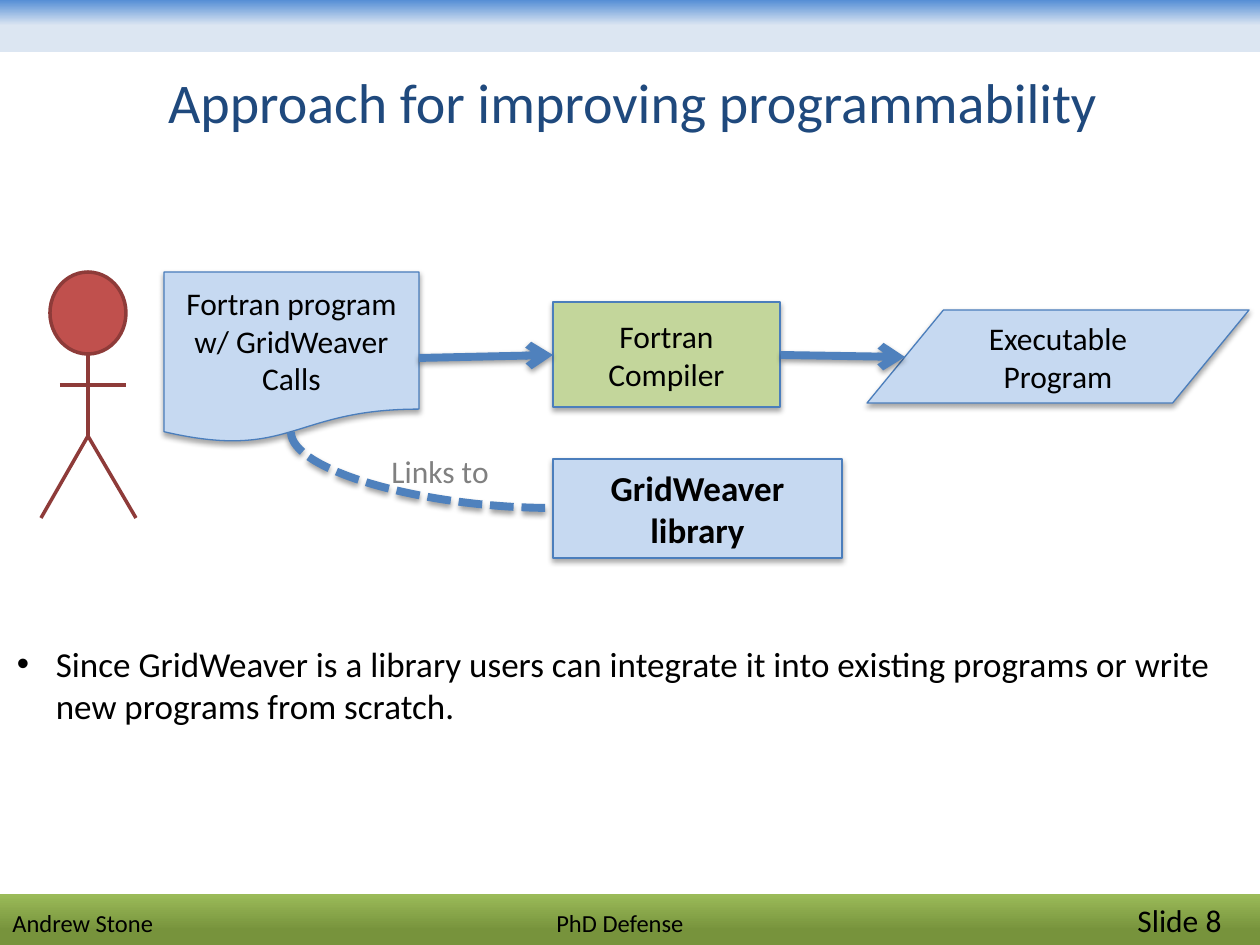
from lxml import etree
from pptx import Presentation
from pptx import util as u
from pptx.dml.color import RGBColor
from pptx.enum import dml, shapes, text
from pptx.oxml import ns

SHAPE, LINK = shapes.MSO_SHAPE, shapes.MSO_CONNECTOR
ALIGN, ANCHOR, FIT = text.PP_ALIGN, text.MSO_ANCHOR, text.MSO_AUTO_SIZE
DPI = 126

THEME = {
    "font": "Calibri", "ink": "000000", "title": "1F497D", "muted": "808080",
    "box": "C6D9F1", "tool": "C3D69B", "edge": "4B7EBC", "arrow": "4F81BD",
    "user": "C0504D", "limb": "8E3B39",
    "foot": [(0, "9BBB59"), (0.7, "77933C")],
    "head": [(0, "558ED5"), (0.49, "DCE6F2")],
    "big": 32, "mid": 20, "body": 18, "small": 14,
}

TITLE = "Approach for improving programmability"
POINT = ("Since GridWeaver is a library users can integrate it into existing "
         "programs or write new programs from scratch.")
FOOT = [("Andrew Stone\tPhD Defense\t", "small"), ("Slide 8", "body")]
TABS = [544, 1125]
BARS = [("foot", (0, 894, 1260, 52)), ("head", (0, 0, 1260, 52))]
BOXES = [
    (SHAPE.FLOWCHART_DOCUMENT, (164, 272, 255, 171), "box", "body", False,
     ["Fortran program w/ GridWeaver Calls"]),
    (SHAPE.FLOWCHART_DATA, (867, 310, 382, 93), "box", "body", False,
     ["Executable", "Program"]),
    (SHAPE.RECTANGLE, (553, 459, 289, 99), "box", "mid", True,
     ["GridWeaver library"]),
    (SHAPE.RECTANGLE, (553, 302, 227, 105), "tool", "body", False,
     ["Fortran Compiler"]),
]
ARROWS = [(419, 358, 553, 355), (781, 355, 905, 357)]
CURVE = (291, 432, 553, 508)
FACE = (50, 272, 76, 82)
LIMBS = [(88, 354, 88, 436), (88, 436, 136, 518),
         (88, 436, 41, 518), (60, 385, 126, 385)]


def px(*vals):
    return [u.Emu(round(v * u.Inches(1) / DPI)) for v in vals]


def rgb(key):
    return RGBColor.from_string(THEME.get(key, key))


def put(obj, **vals):
    for name, val in vals.items():
        setattr(obj, name, val)


def sub(node, tag, **vals):
    return etree.SubElement(node, ns.qn(tag), vals)


def place(shape, box):
    put(shape, **dict(zip(("left", "top", "width", "height"), px(*box))))


def write(para, words, size, ink="ink", bold=False):
    run = para.add_run()
    run.text = words
    put(run.font, name=THEME["font"], size=u.Pt(THEME[size]), bold=bold)
    run.font.color.rgb = rgb(ink)


def stroke(shape, key, width):
    shape.line.color.rgb = rgb(key)
    shape.line.width = u.Pt(width)


def shade(shape, dist=None, alpha=None):
    props = shape._element.spPr
    for old in props.findall(ns.qn("a:effectLst")):
        props.remove(old)
    fx = sub(props, "a:effectLst")
    if dist:
        drop = sub(fx, "a:outerShdw", blurRad="40000", dist=str(u.Pt(dist)),
                   dir="5400000", rotWithShape="0")
        sub(sub(drop, "a:srgbClr", val=THEME["ink"]), "a:alpha",
            val=str(alpha * 1000))


def link(tree, kind, ends, key, width):
    line = tree.add_connector(kind, *px(*ends))
    stroke(line, key, width)
    return line


def bar(tree, key, box):
    shape = tree.add_shape(SHAPE.RECTANGLE, *px(*box))
    shape.shadow.inherit = False
    shape.line.fill.background()
    shape.fill.gradient()
    shape.fill.gradient_angle = 270
    for stop, (pos, hue) in zip(shape.fill.gradient_stops, THEME[key]):
        stop.position = pos
        stop.color.rgb = rgb(hue)
    return shape


def footer(shape):
    para = shape.text_frame.paragraphs[0]
    para.alignment = ALIGN.LEFT
    tabs = sub(para._p.get_or_add_pPr(), "a:tabLst")
    for pos in px(*TABS):
        sub(tabs, "a:tab", pos=str(pos), algn="l")
    for words, size in FOOT:
        write(para, words, size)


def flow(tree):
    for kind, box, fill, size, bold, lines in BOXES:
        shape = tree.add_shape(kind, *px(*box))
        shape.fill.solid()
        shape.fill.fore_color.rgb = rgb(fill)
        stroke(shape, "edge", 0.75)
        shade(shape, 1.8, 35)
        frame = shape.text_frame
        frame.word_wrap = True
        for i, words in enumerate(lines):
            para = frame.add_paragraph() if i else frame.paragraphs[0]
            para.alignment = ALIGN.CENTER
            write(para, words, size, bold=bold)
    for ends in ARROWS:
        line = link(tree, LINK.STRAIGHT, ends, "arrow", 4.5)
        sub(line.line._get_or_add_ln(), "a:tailEnd", type="arrow")
        shade(line, 1.6, 38)


def curve(tree):
    x1, y1, x2, y2 = CURVE
    cx, cy, dx, dy = (x1 + x2) / 2, (y1 + y2) / 2, (y2 - y1) / 2, (x2 - x1) / 2
    line = link(tree, LINK.CURVE, (cx + dx, cy - dy, cx - dx, cy + dy),
                "arrow", 4.5)
    line.line.dash_style = dml.MSO_LINE.SQUARE_DOT
    props = line._element.spPr
    props.find(ns.qn("a:xfrm")).set("rot", "16200000")
    props.find(ns.qn("a:prstGeom")).set("prst", "curvedConnector2")
    shade(line, 1.6, 38)


def person(tree):
    face = tree.add_shape(SHAPE.OVAL, *px(*FACE))
    face.shadow.inherit = False
    face.fill.solid()
    face.fill.fore_color.rgb = rgb("user")
    stroke(face, "limb", 2)
    for ends in LIMBS:
        shade(link(tree, LINK.STRAIGHT, ends, "limb", 2))


def main():
    deck = Presentation()
    put(deck, slide_width=u.Inches(10), slide_height=u.Inches(7.5))
    slide = deck.slides.add_slide(deck.slide_layouts[1])
    tree = slide.shapes
    title, body = slide.placeholders

    place(title, (-11, 40, 1288, 123))
    put(title.text_frame, vertical_anchor=ANCHOR.MIDDLE, auto_size=FIT.NONE)
    para = title.text_frame.paragraphs[0]
    para.alignment = ALIGN.CENTER
    write(para, TITLE, "big", "title")

    place(body, (-4, 636, 1260, 97))
    put(body.text_frame, vertical_anchor=ANCHOR.TOP, auto_size=FIT.NONE)
    para = body.text_frame.paragraphs[0]
    para.space_before = u.Pt(0)
    indent = px(39)[0]
    props = para._p.get_or_add_pPr()
    put(props, marL=indent)
    props.set("indent", str(-indent))
    sub(props, "a:buFont", typeface="Arial")
    sub(props, "a:buChar", char="•")
    write(para, POINT, "mid")

    strips = [bar(tree, *item) for item in BARS]
    footer(strips[0])
    flow(tree)
    curve(tree)
    person(tree.add_group_shape().shapes)

    label = tree.add_textbox(*px(379, 446, 125, 50)).text_frame
    put(label, word_wrap=False, auto_size=FIT.SHAPE_TO_FIT_TEXT)
    write(label.paragraphs[0], "Links to", "body", "muted")
    deck.save("out.pptx")


if __name__ == "__main__":
    main()
